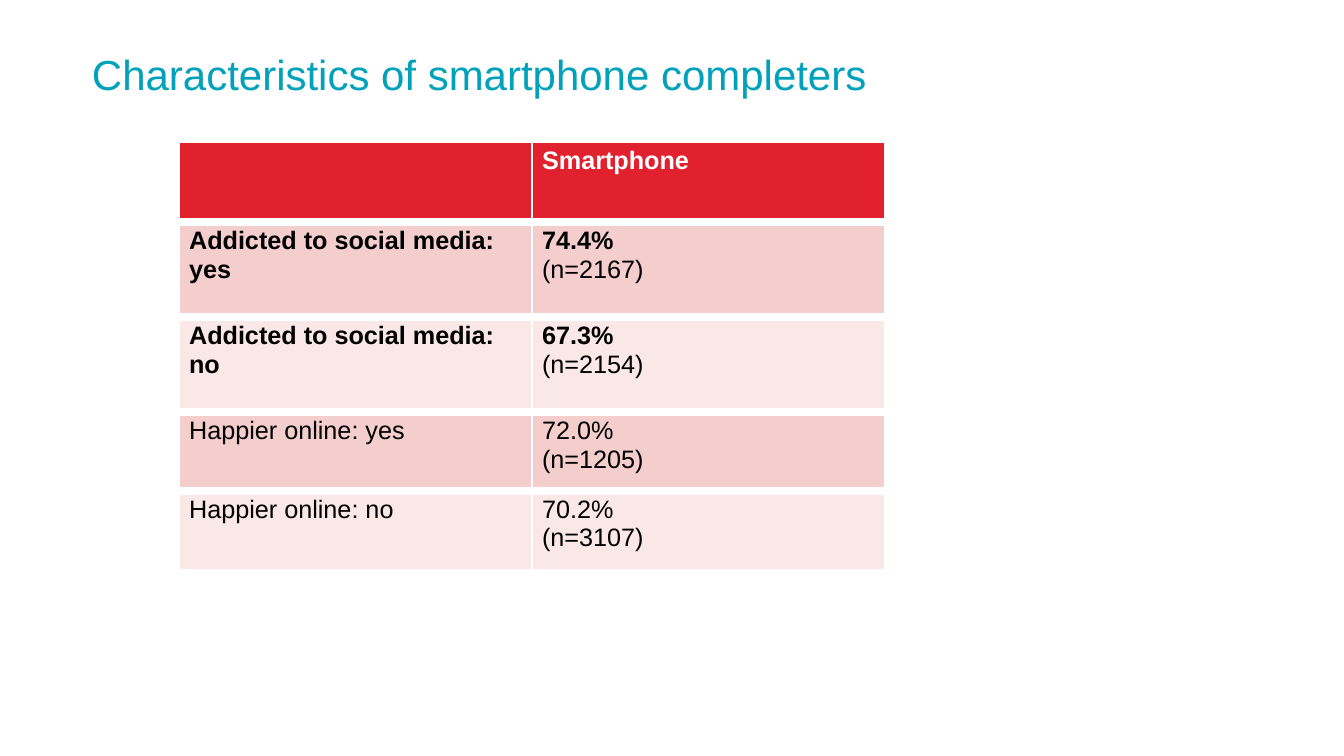
import pptx
import pptx.util
import pptx.dml.color
import pptx.enum.text
import pptx.oxml
import pptx.oxml.ns

TITLE = "Characteristics of smartphone completers"
ROWS = [
    ("", ["Smartphone"]),
    ("Addicted to social media: yes", ["74.4%", "(n=2167)"]),
    ("Addicted to social media: no", ["67.3%", "(n=2154)"]),
    ("Happier online: yes", ["72.0%", "(n=1205)"]),
    ("Happier online: no", ["70.2%", "(n=3107)"]),
]
ROW_HEIGHTS = [80, 95, 95, 79, 79]
BOLD_ROWS = 3
COLUMN_WIDTH = 353
TABLE_LEFT, TABLE_TOP = 179, 142
TITLE_BOX = (92, 54, 1159, 88)
TEAL, RED, WHITE, BLACK = "00A1BA", "E2212F", "FFFFFF", "000000"
BANDS = ["FAE8E8", "F4CDCD"]
THIN, THICK = 1, 6


def px(length):
    return round(length * 914400 / 100.8)


def color(value):
    return pptx.dml.color.RGBColor.from_string(value)


def write(paragraph, text, ink, **formats):
    run = paragraph.add_run()
    run.text = text
    run.font.color.rgb = color(ink)
    for name, value in {"name": "Arial", **formats}.items():
        setattr(run.font, name, value)


def add_borders(cell, widths):
    properties = cell._tc.get_or_add_tcPr()
    for position, (side, width) in enumerate(widths.items()):
        properties.insert(position, pptx.oxml.parse_xml(
            f'<a:ln{side} {pptx.oxml.ns.nsdecls("a")} w="{pptx.util.Pt(width)}">'
            f'<a:solidFill><a:srgbClr val="{WHITE}"/></a:solidFill></a:ln{side}>'))


def add_title(slide):
    frame = slide.shapes.add_textbox(*map(px, TITLE_BOX)).text_frame
    settings = dict.fromkeys(
        ["margin_left", "margin_top", "margin_right", "margin_bottom"], 0)
    settings["word_wrap"] = True
    settings["vertical_anchor"] = pptx.enum.text.MSO_ANCHOR.TOP
    for name, value in settings.items():
        setattr(frame, name, value)
    heading = frame.paragraphs[0]
    heading.line_spacing = 0.9
    write(heading, TITLE, TEAL, size=pptx.util.Pt(30))


def add_results(slide):
    results = slide.shapes.add_table(
        len(ROWS), 2, px(TABLE_LEFT), px(TABLE_TOP),
        px(2 * COLUMN_WIDTH), px(sum(ROW_HEIGHTS))).table
    for column in results.columns:
        column.width = px(COLUMN_WIDTH)
    for index, (label, values) in enumerate(ROWS):
        results.rows[index].height = px(ROW_HEIGHTS[index])
        for column, lines in enumerate([[label], values]):
            cell = results.cell(index, column)
            cell.fill.solid()
            cell.fill.fore_color.rgb = color(BANDS[index % 2] if index else RED)
            add_borders(cell, {
                "L": THIN, "R": THIN,
                "T": THICK if index else THIN,
                "B": THICK if index < len(ROWS) - 1 else THIN})
            for number, line in enumerate(lines):
                frame = cell.text_frame
                paragraph = frame.add_paragraph() if number else frame.paragraphs[0]
                if line:
                    write(paragraph, line, BLACK if index else WHITE,
                          size=pptx.util.Pt(18),
                          bold=index < BOLD_ROWS and number == 0)


def main():
    deck = pptx.Presentation()
    deck.slide_width, deck.slide_height = px(1344), px(756)
    slide = deck.slides.add_slide(deck.slide_layouts[6])
    add_title(slide)
    add_results(slide)
    deck.save("out.pptx")


if __name__ == "__main__":
    main()
